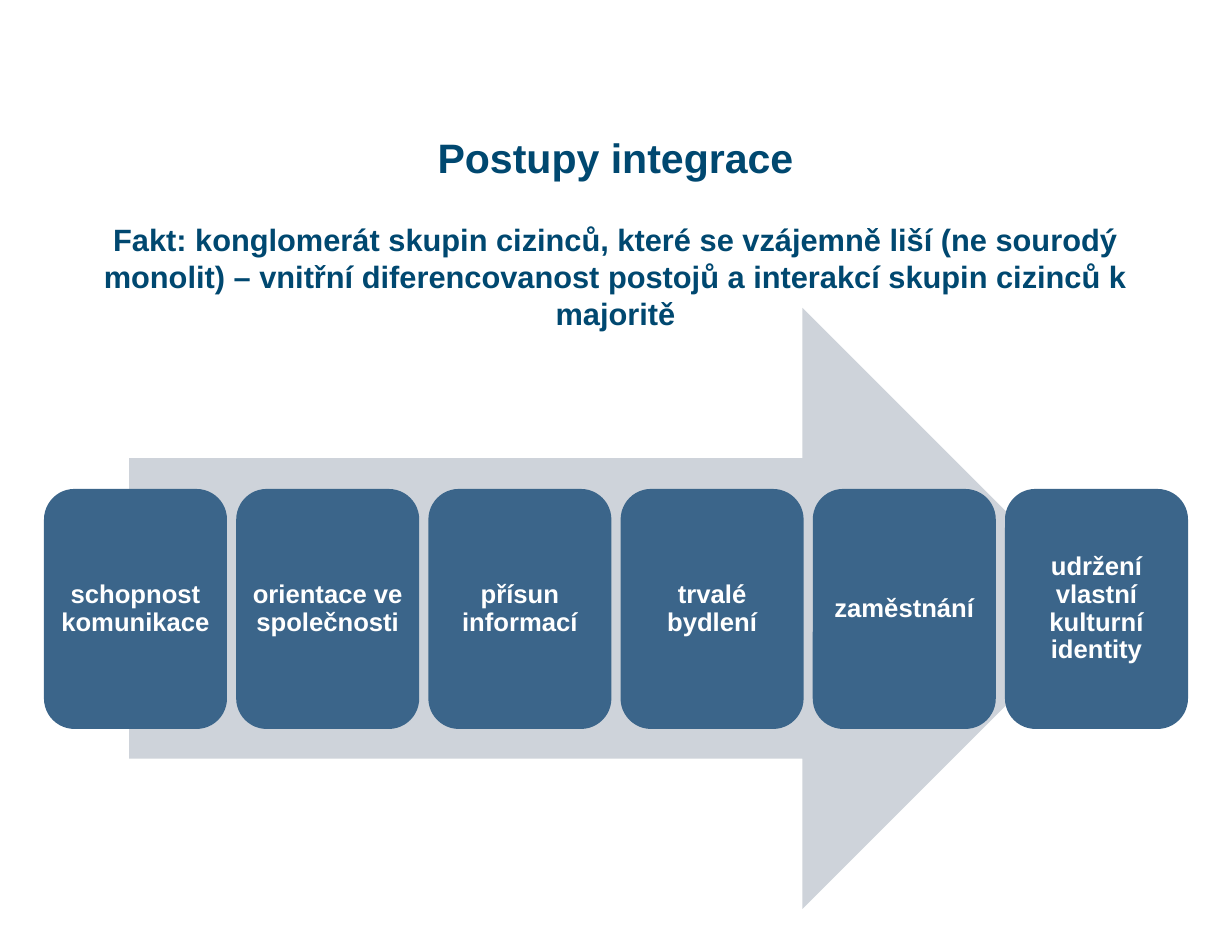
from pptx import Presentation
from pptx import util as u
from pptx.dml import color
from pptx.enum import shapes, text

EMU_PER_PX = 914400 / 123.2


def px(length):
    return u.Emu(round(length * EMU_PER_PX))


def style(paragraph, size, hex_color):
    paragraph.alignment = text.PP_ALIGN.CENTER
    paragraph.font.name = "Arial"
    paragraph.font.size = u.Pt(size)
    paragraph.font.bold = True
    paragraph.font.color.rgb = color.RGBColor.from_string(hex_color)


deck = Presentation()
deck.slide_width, deck.slide_height = px(1232), px(946)
page = deck.slides.add_slide(deck.slide_layouts[5])

# Title with the statement below it
title = page.shapes.title
title.left, title.top, title.width, title.height = px(43), px(132), px(1145), px(206)
frame = title.text_frame
frame.auto_size = text.MSO_AUTO_SIZE.NONE
frame.vertical_anchor = text.MSO_ANCHOR.BOTTOM
frame.text = (
    "Postupy integrace\n"
    "Fakt: konglomerát skupin cizinců, které se vzájemně liší (ne sourodý monolit) "
    "– vnitřní diferencovanost postojů a interakcí skupin cizinců k majoritě"
)
heading, statement = frame.paragraphs
style(heading, 24, "004870")
style(statement, 18, "004870")
heading.space_before = u.Pt(0)
statement.space_before = u.Pt(23)

# Arrow behind the steps
arrow = page.shapes.add_shape(
    shapes.MSO_SHAPE.RIGHT_ARROW, px(129), px(308), px(974), px(601))
arrow.shadow.inherit = False
arrow.fill.solid()
arrow.fill.fore_color.rgb = color.RGBColor.from_string("CED3DA")
arrow.line.fill.background()

# Steps, evenly spread between the first and last left edges
steps = [
    "schopnost komunikace",
    "orientace ve společnosti",
    "přísun informací",
    "trvalé bydlení",
    "zaměstnání",
    "udržení vlastní kulturní identity",
]
first_left, last_left = 44, 1005
pitch = (last_left - first_left) / (len(steps) - 1)
for index, label in enumerate(steps):
    box = page.shapes.add_shape(
        shapes.MSO_SHAPE.ROUNDED_RECTANGLE,
        px(first_left + index * pitch), px(489), px(183), px(240))
    box.shadow.inherit = False
    box.fill.solid()
    box.fill.fore_color.rgb = color.RGBColor.from_string("3B658A")
    box.line.fill.background()
    frame = box.text_frame
    frame.word_wrap = True
    frame.vertical_anchor = text.MSO_ANCHOR.MIDDLE
    # The rounded corners already inset the text by 9 px
    frame.margin_left = frame.margin_right = px(7)
    frame.margin_top = frame.margin_bottom = px(7)
    frame.text = label
    style(frame.paragraphs[0], 15, "FFFFFF")
    frame.paragraphs[0].line_spacing = 0.9

deck.save("out.pptx")
